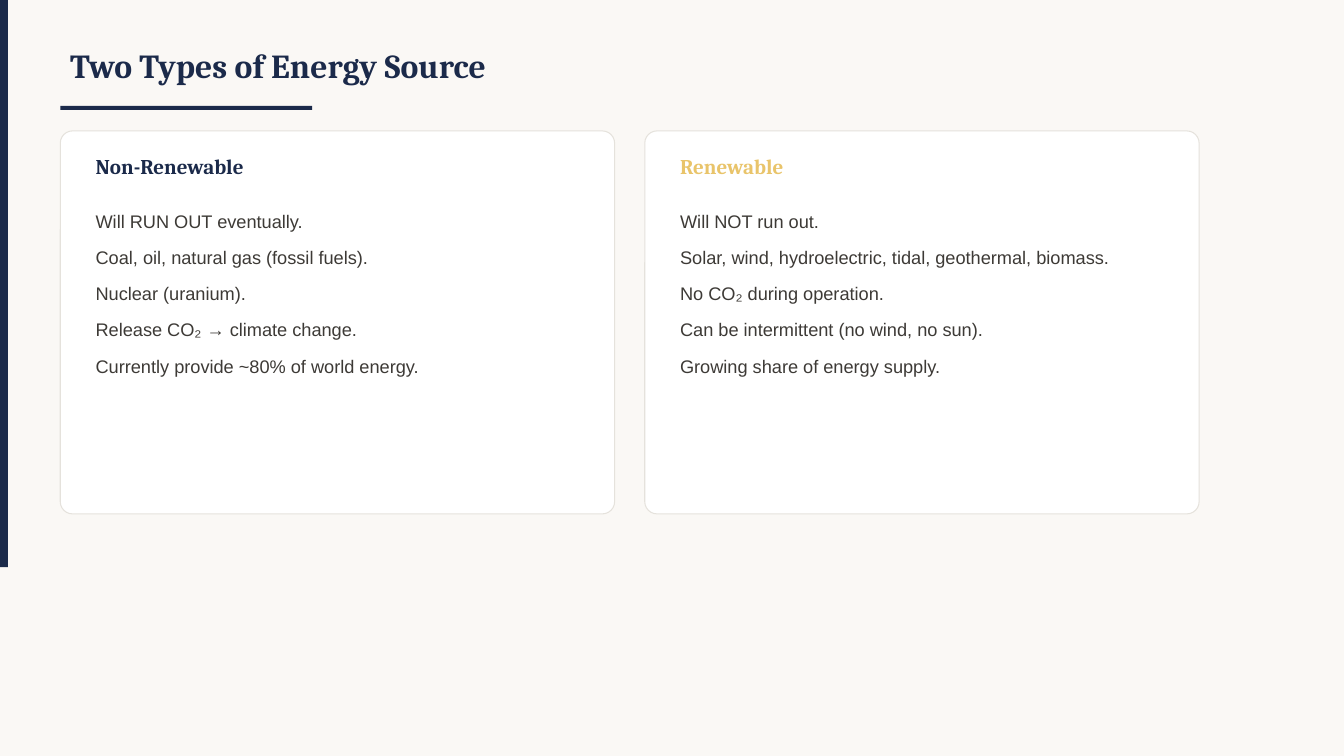
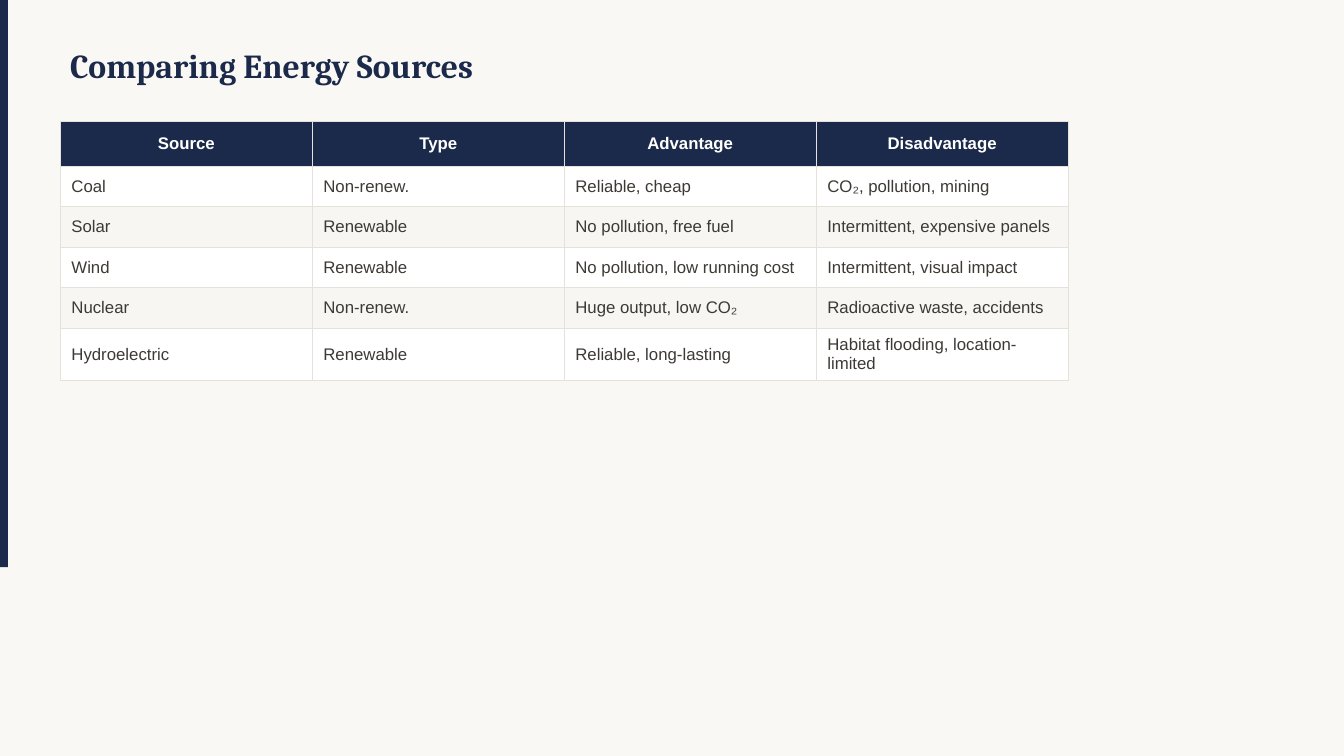
from lxml import etree
from pptx import Presentation
from pptx import util as u
from pptx.dml.color import RGBColor
from pptx.enum import shapes, text
from pptx.oxml.ns import qn

Cm, Pt = u.Cm, u.Pt

# Shared palette and fonts
NAVY, GOLD, INK = "1B2A4A", "E9C46A", "3D3A36"
PAPER, WHITE, STRIPE, RULE = "FAF8F5", "FFFFFF", "F8F6F3", "E5E2DC"
SERIF, SANS = "Cambria", "Arial"
LEFT = 1.52
CARD_WIDTH, CARD_PITCH = 13.97, 14.73


def color(value):
    return RGBColor.from_string(value)


class Deck:
    """Holds the presentation, its style and the current slide."""

    def __init__(self):
        self.presentation = Presentation()
        self.presentation.slide_width = Cm(33.87)
        self.presentation.slide_height = Cm(19.05)
        background = self.presentation.slide_master.background.fill
        background.solid()
        background.fore_color.rgb = color(PAPER)
        self.slide = None

    def new_slide(self, title):
        layout = self.presentation.slide_layouts[6]
        self.slide = self.presentation.slides.add_slide(layout)
        self.box(0, 0, 0.2, 14.29, NAVY)
        self.heading(title, LEFT, 0.76, 25.4, 1.78, 24)

    def box(self, left, top, width, height, fill, line=None, radius=None):
        kinds = shapes.MSO_SHAPE
        kind = kinds.RECTANGLE if radius is None else kinds.ROUNDED_RECTANGLE
        shape = self.slide.shapes.add_shape(
            kind, Cm(left), Cm(top), Cm(width), Cm(height))
        shape.shadow.inherit = False
        shape.fill.solid()
        shape.fill.fore_color.rgb = color(fill)
        if radius is not None:
            shape.adjustments[0] = radius
        if line is None:
            shape.line.fill.background()
        else:
            shape.line.color.rgb = color(line)
            shape.line.width = Pt(0.75)

    def style(self, paragraph, font_name, size, ink, bold=False):
        font = paragraph.font
        font.name, font.size, font.bold = font_name, Pt(size), bold
        font.color.rgb = color(ink)

    def text_frame(self, left, top, width, height):
        frame = self.slide.shapes.add_textbox(
            Cm(left), Cm(top), Cm(width), Cm(height)).text_frame
        frame.word_wrap = True
        return frame

    def heading(self, words, left, top, width, height, size, ink=NAVY):
        frame = self.text_frame(left, top, width, height)
        frame.vertical_anchor = text.MSO_ANCHOR.MIDDLE
        frame.text = words
        self.style(frame.paragraphs[0], SERIF, size, ink, bold=True)

    def body(self, lines, left, top, width, height):
        frame = self.text_frame(left, top, width, height)
        frame.text = "\n".join(lines)
        for paragraph in frame.paragraphs:
            paragraph.line_spacing = 1.4
            paragraph.space_after = Pt(4)
            self.style(paragraph, SANS, 13, INK)

    def card(self, left, title, ink, lines):
        self.box(left, 3.3, CARD_WIDTH, 9.65, WHITE, RULE, radius=0.032)
        inner = left + 0.64
        self.heading(title, inner, 3.68, 12.7, 1.02, 15, ink)
        self.body(lines, inner, 4.95, 12.7, 7.37)

    def table(self, rows, left, top, column_width, header_height, row_height):
        column_count = len(rows[0])
        height = header_height + row_height * (len(rows) - 1)
        table = self.slide.shapes.add_table(
            len(rows), column_count, Cm(left), Cm(top),
            Cm(column_width * column_count), Cm(height)).table
        for column in table.columns:
            column.width = Cm(column_width)
        for index, values in enumerate(rows):
            header = index == 0
            table.rows[index].height = Cm(header_height if header else row_height)
            fill = NAVY if header else WHITE if index % 2 else STRIPE
            for cell, value in zip(table.rows[index].cells, values):
                self.cell(cell, value, fill, header)

    def cell(self, cell, value, fill, header):
        cell.text = value
        cell.vertical_anchor = text.MSO_ANCHOR.MIDDLE
        cell.margin_left = cell.margin_right = Cm(0.28)
        cell.margin_top = cell.margin_bottom = Cm(0.15)
        paragraph = cell.text_frame.paragraphs[0]
        if header:
            paragraph.alignment = text.PP_ALIGN.CENTER
        self.style(paragraph, SANS, 12, WHITE if header else INK, header)
        self.borders(cell)
        cell.fill.solid()
        cell.fill.fore_color.rgb = color(fill)

    def borders(self, cell):
        properties = cell._tc.get_or_add_tcPr()
        for side in ("a:lnL", "a:lnR", "a:lnT", "a:lnB"):
            line = etree.SubElement(properties, qn(side), w=str(Pt(0.5)))
            solid = etree.SubElement(line, qn("a:solidFill"))
            etree.SubElement(solid, qn("a:srgbClr"), val=RULE)


def main():
    deck = Deck()

    # Two kinds of source, side by side
    deck.new_slide("Two Types of Energy Source")
    deck.box(LEFT, 2.67, 6.35, 0.1, NAVY)
    cards = [
        ("Non-Renewable", NAVY, [
            "Will RUN OUT eventually.",
            "Coal, oil, natural gas (fossil fuels).",
            "Nuclear (uranium).",
            "Release CO₂ → climate change.",
            "Currently provide ~80% of world energy.",
        ]),
        ("Renewable", GOLD, [
            "Will NOT run out.",
            "Solar, wind, hydroelectric, tidal, geothermal, biomass.",
            "No CO₂ during operation.",
            "Can be intermittent (no wind, no sun).",
            "Growing share of energy supply.",
        ]),
    ]
    for index, (title, ink, lines) in enumerate(cards):
        deck.card(LEFT + index * CARD_PITCH, title, ink, lines)

    # Comparison table
    deck.new_slide("Comparing Energy Sources")
    deck.table([
        ("Source", "Type", "Advantage", "Disadvantage"),
        ("Coal", "Non-renew.", "Reliable, cheap", "CO₂, pollution, mining"),
        ("Solar", "Renewable", "No pollution, free fuel",
         "Intermittent, expensive panels"),
        ("Wind", "Renewable", "No pollution, low running cost",
         "Intermittent, visual impact"),
        ("Nuclear", "Non-renew.", "Huge output, low CO₂",
         "Radioactive waste, accidents"),
        ("Hydroelectric", "Renewable", "Reliable, long-lasting",
         "Habitat flooding, location-limited"),
    ], LEFT, 3.05, 6.35, 1.14, 1.02)

    deck.presentation.save("out.pptx")


if __name__ == "__main__":
    main()
